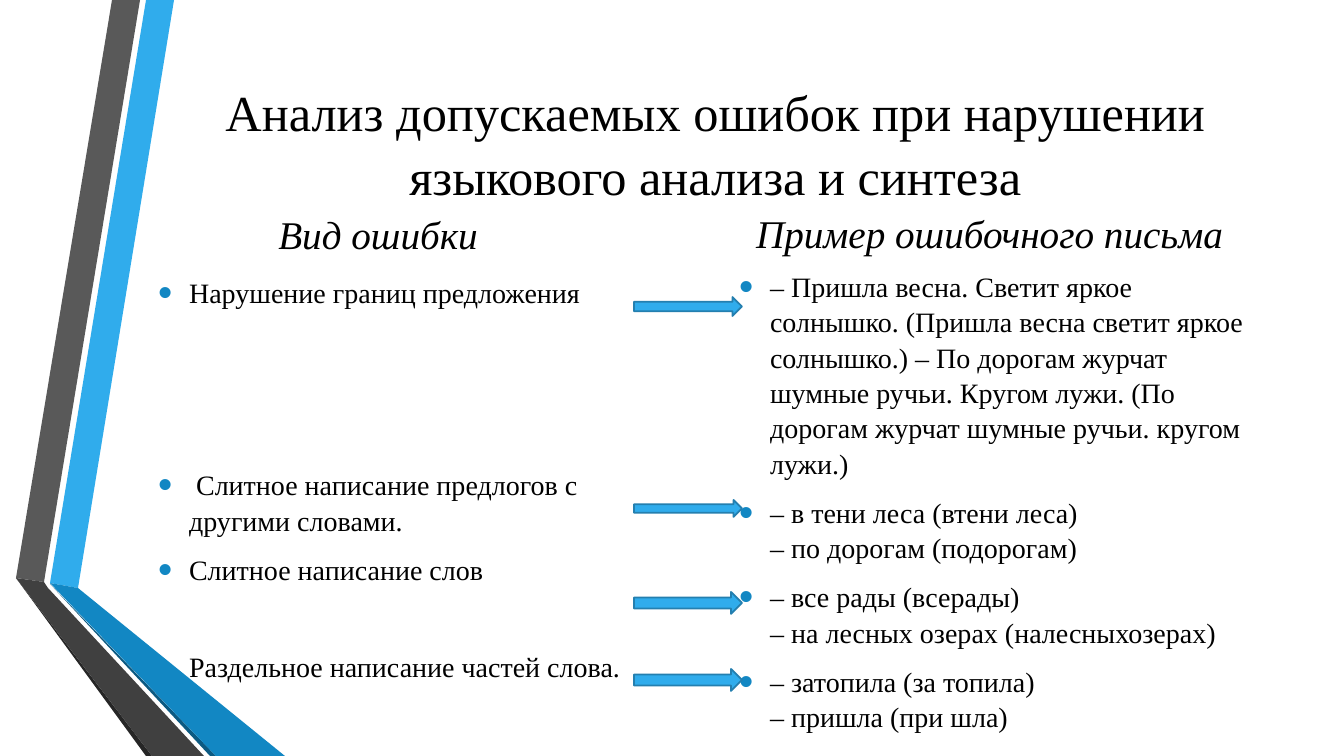
from lxml import etree
from pptx import Presentation
from pptx.dml.color import RGBColor
from pptx.enum.shapes import MSO_SHAPE
from pptx.enum.text import MSO_ANCHOR, MSO_AUTO_SIZE, PP_ALIGN
from pptx.oxml.ns import qn
from pptx.util import Emu, Pt

LEFT, CENTER = PP_ALIGN.LEFT, PP_ALIGN.CENTER
TOP, MIDDLE, BOTTOM = MSO_ANCHOR.TOP, MSO_ANCHOR.MIDDLE, MSO_ANCHOR.BOTTOM
RIGHT_ARROW = MSO_SHAPE.RIGHT_ARROW

PX = 914400 / 100.8
FONT = "Times New Roman"
INDENT = 31
COLORS = {
    "text": "000000", "bullet": "1287C3", "arrow": "30ACEC", "arrow_line": "247FAF",
    "blue": "30ACEC", "blue_mid": "1287C3", "blue_dark": "0C5A82",
    "grey": "595959", "grey_mid": "404040", "grey_dark": "262626",
}

# Content: text, box (left, top, width, height)
TITLE = ("Анализ допускаемых ошибок при нарушении языкового анализа и синтеза",
         (163, 76, 1105, 193))
HEADINGS = [  # placeholder, text, box, alignment
    (1, "Вид ошибки", (124, 199, 508, 63), CENTER),
    (3, "Пример ошибочного письма", (746, 198, 510, 63), LEFT),
]
LISTS = [  # placeholder, box, items as (text, points before)
    (2, (148, 269, 539, 361), [
        ("Нарушение границ предложения", 4),
        (" Слитное написание предлогов с другими словами.", 106),
        ("Слитное написание слов", 4),
        ("Раздельное написание частей слова.", 38),
    ]),
    (4, (729, 263, 539, 400), [
        ("– Пришла весна. Светит яркое солнышко. (Пришла весна светит яркое солнышко.) "
         "– По дорогам журчат шумные ручьи. Кругом лужи. "
         "(По дорогам журчат шумные ручьи. кругом лужи.)", 4),
        ("– в тени леса (втени леса)\n– по дорогам (подорогам)", 4),
        ("– все рады (всерады)\n– на лесных озерах (налесныхозерах)", 4),
        ("– затопила (за топила)\n– пришла (при шла)", 4),
    ]),
]
ARROW_X, ARROW_W = 634, 108
ARROWS = [(297, 19), (500, 17), (592, 22), (669, 22)]  # top, height
RIBBONS = [
    ("blue", [(50, 583), (78, 588), (174, 0), (146, 0)]),
    ("grey", [(140, 0), (112, 0), (16, 578), (44, 582)]),
    ("grey_dark", [(16, 578), (146, 756), (152, 756)]),
    ("blue_dark", [(50, 584), (210, 756), (216, 756)]),
    ("blue_mid", [(50, 583), (216, 756), (285, 756), (78, 588)]),
    ("grey_mid", [(204, 756), (48, 588), (44, 582), (16, 578), (152, 756)]),
]


def px(n):
    return Emu(round(n * PX))


def rgb(name):
    return RGBColor.from_string(COLORS[name])


def prepare(sp, box, anchor):
    sp.left, sp.top, sp.width, sp.height = map(px, box)
    tf = sp.text_frame
    tf.word_wrap = True
    tf.auto_size = MSO_AUTO_SIZE.NONE
    tf.vertical_anchor = anchor
    return tf


def write(p, text, size, align=LEFT, before=0, after=0, italic=False):
    p.text = text
    p.alignment = align
    p.line_spacing = 1.05
    p.space_before, p.space_after = Pt(before), Pt(after)
    p.font.name, p.font.size = FONT, Pt(size)
    p.font.bold, p.font.italic = False, italic
    p.font.color.rgb = rgb("text")


def add_bullet(p):
    pPr = p._p.get_or_add_pPr()
    pPr.set("marL", str(px(INDENT)))
    pPr.set("indent", str(-px(INDENT)))
    marks = [etree.Element(qn(tag)) for tag in
             ("a:buClr", "a:buSzPct", "a:buFont", "a:buChar")]
    etree.SubElement(marks[0], qn("a:srgbClr"), val=COLORS["bullet"])
    marks[1].set("val", "145000")
    marks[2].set("typeface", "Arial")
    marks[3].set("char", "•")
    at = list(pPr).index(pPr.find(qn("a:defRPr")))
    pPr[at:at] = marks


prs = Presentation()
prs.slide_width, prs.slide_height = px(1344), px(756)
s = prs.slides.add_slide(prs.slide_layouts[4])
holders = {sp.placeholder_format.idx: sp for sp in s.placeholders}

# Ribbons behind the text
group = s.shapes.add_group_shape()
for color, points in RIBBONS:
    builder = group.shapes.build_freeform(*points[0], scale=PX)
    builder.add_line_segments(points[1:], close=True)
    sp = builder.convert_to_shape()
    sp.shadow.inherit = False
    sp.fill.solid()
    sp.fill.fore_color.rgb = rgb(color)
    sp.line.fill.background()
s.shapes._spTree.insert(2, group._element)

# Title, raised by a deep bottom margin
tf = prepare(holders[0], TITLE[1], MIDDLE)
tf.margin_bottom = px(66)
write(tf.paragraphs[0], TITLE[0], 36, CENTER)

# Column headings
for idx, text, box, align in HEADINGS:
    tf = prepare(holders[idx], box, BOTTOM)
    write(tf.paragraphs[0], text, 28, align, 5.6, 6, italic=True)

# Bulleted columns
for idx, box, items in LISTS:
    tf = prepare(holders[idx], box, TOP)
    for i, (text, before) in enumerate(items):
        p = tf.add_paragraph() if i else tf.paragraphs[0]
        write(p, text, 20, before=before, after=6)
        add_bullet(p)

# Arrows between the columns
for top, height in ARROWS:
    sp = s.shapes.add_shape(RIGHT_ARROW, *map(px, (ARROW_X, top, ARROW_W, height)))
    sp.shadow.inherit = False
    sp.fill.solid()
    sp.fill.fore_color.rgb = rgb("arrow")
    sp.line.color.rgb = rgb("arrow_line")
    sp.line.width = Pt(1.25)

prs.save("out.pptx")
